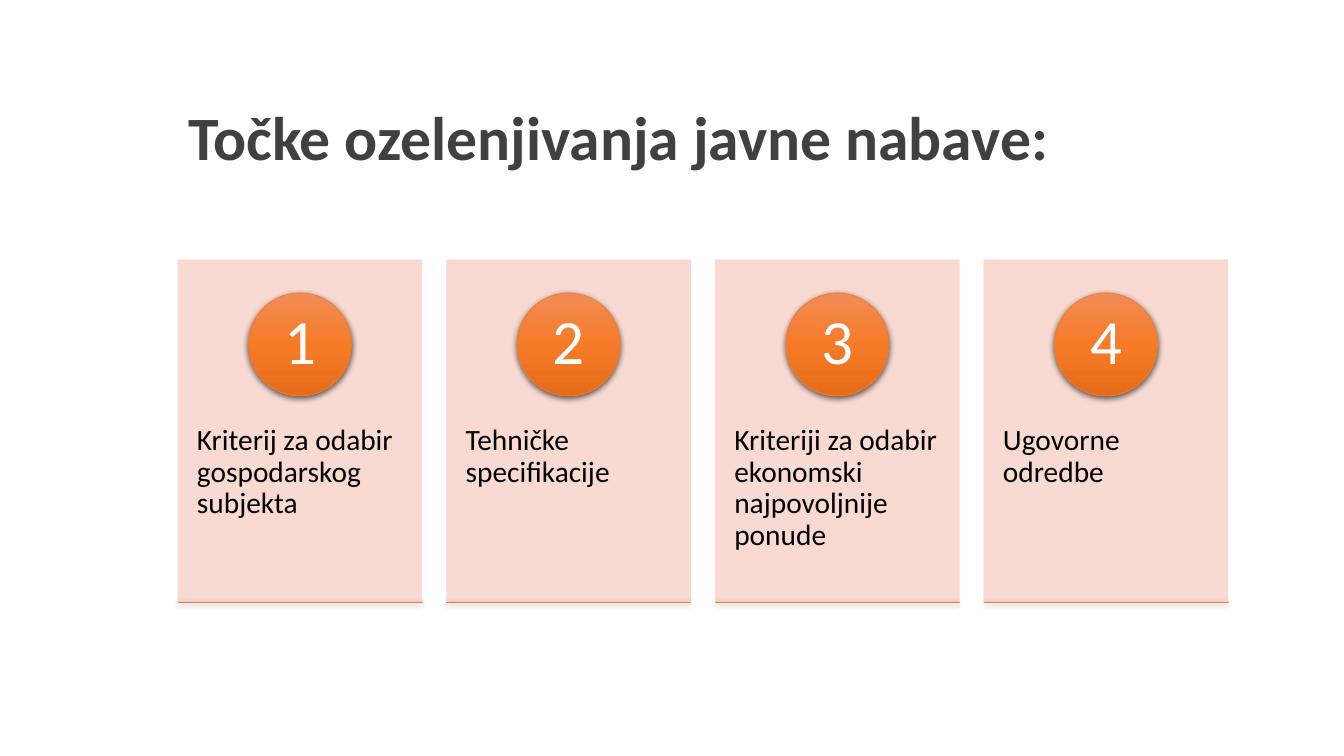
from dataclasses import dataclass

from lxml.etree import SubElement
from pptx import Presentation
from pptx.dml.color import RGBColor
from pptx.enum.shapes import MSO_SHAPE
from pptx.enum.text import MSO_ANCHOR, MSO_AUTO_SIZE, PP_ALIGN
from pptx.oxml.ns import qn
from pptx.util import Emu, Pt

PAGE_WIDTH, PAGE_HEIGHT = 1344, 756
EMU_PER_PX = 12192000 / PAGE_WIDTH

LEFT, WIDTH = 178, 1050
CARD_TOP, CARD_WIDTH, CARD_HEIGHT = 260, 244, 342
BADGE_TOP, BADGE_SIZE = 293, 103
CARD_INSETS = (19, 165, 19, 43)
BADGE_INSETS = (8, 1, 8, 1)

TITLE = "Točke ozelenjivanja javne nabave:"
POINTS = [
    "Kriterij za odabir gospodarskog subjekta",
    "Tehničke specifikacije",
    "Kriteriji za odabir ekonomski najpovoljnije ponude",
    "Ugovorne odredbe",
]


@dataclass(frozen=True)
class Theme:
    font: str = "Calibri"
    title_size: int = 44
    badge_size: int = 45
    body_size: int = 21
    title: str = "404040"
    body: str = "000000"
    badge_text: str = "FFFFFF"
    card: str = "F8D7CE"
    card_opacity: int = 90
    accent_line: str = "ED7D31"
    accent_stops: tuple = ((0, "F18C57"), (50, "F67B28"), (100, "E56C19"))
    shadow: str = "000000"
    shadow_opacity: int = 63


def px(length):
    return Emu(round(length * EMU_PER_PX))


def add_alpha(color_node, opacity):
    SubElement(color_node, qn("a:alpha"), val=str(opacity * 1000))


class SlideBuilder:
    def __init__(self, page, theme):
        self.page = page
        self.theme = theme

    def set_text(self, frame, text, size, color, align=PP_ALIGN.LEFT, bold=False):
        frame.word_wrap = True
        frame.text = text
        para = frame.paragraphs[0]
        para.alignment = align
        para.line_spacing = 0.9
        font = para.font
        font.name, font.size, font.bold = self.theme.font, Pt(size), bold
        font.color.rgb = RGBColor.from_string(color)

    def title(self, text, left, top, width, height):
        box = self.page.shapes.title
        box.left, box.top, box.width, box.height = map(px, (left, top, width, height))
        frame = box.text_frame
        frame.auto_size = MSO_AUTO_SIZE.NONE
        frame.vertical_anchor = MSO_ANCHOR.MIDDLE
        self.set_text(frame, text, self.theme.title_size, self.theme.title, bold=True)

    def shape(self, kind, left, top, width, height, line_color):
        box = self.page.shapes.add_shape(kind, *map(px, (left, top, width, height)))
        box.shadow.inherit = False
        box.line.width = Pt(0.5)
        box.line.color.rgb = RGBColor.from_string(line_color)
        return box

    def set_insets(self, frame, insets):
        (frame.margin_left, frame.margin_top,
         frame.margin_right, frame.margin_bottom) = map(px, insets)

    def card(self, text, left):
        theme = self.theme
        box = self.shape(MSO_SHAPE.RECTANGLE, left, CARD_TOP,
                         CARD_WIDTH, CARD_HEIGHT, theme.card)
        box.fill.solid()
        box.fill.fore_color.rgb = RGBColor.from_string(theme.card)
        for color_node in box._element.spPr.findall(f".//{qn('a:srgbClr')}"):
            add_alpha(color_node, theme.card_opacity)
        frame = box.text_frame
        frame.vertical_anchor = MSO_ANCHOR.TOP
        self.set_insets(frame, CARD_INSETS)
        self.set_text(frame, text, theme.body_size, theme.body)

    def accent(self, kind, left, top, width, height):
        """Add a shape with the orange gradient and a soft shadow below it."""
        theme = self.theme
        box = self.shape(kind, left, top, width, height, theme.accent_line)
        box.fill.gradient()
        box.fill.gradient_angle = 270
        properties = box._element.spPr
        stops = properties.find(f".//{qn('a:gsLst')}")
        stops.clear()
        for position, color in theme.accent_stops:
            stop = SubElement(stops, qn("a:gs"), pos=str(position * 1000))
            SubElement(stop, qn("a:srgbClr"), val=color)
        shadow = SubElement(properties.find(qn("a:effectLst")), qn("a:outerShdw"),
                            blurRad=str(int(Pt(4.5))), dist=str(int(Pt(1.5))),
                            dir="5400000", algn="ctr", rotWithShape="0")
        shadow_color = SubElement(shadow, qn("a:srgbClr"), val=theme.shadow)
        add_alpha(shadow_color, theme.shadow_opacity)
        return box

    def badge(self, number, left):
        box = self.accent(MSO_SHAPE.OVAL, left, BADGE_TOP, BADGE_SIZE, BADGE_SIZE)
        frame = box.text_frame
        frame.vertical_anchor = MSO_ANCHOR.MIDDLE
        self.set_insets(frame, BADGE_INSETS)
        self.set_text(frame, str(number), self.theme.badge_size,
                      self.theme.badge_text, PP_ALIGN.CENTER)

    def base_rule(self, left):
        self.accent(MSO_SHAPE.RECTANGLE, left, CARD_TOP + CARD_HEIGHT, CARD_WIDTH, 0)


def main():
    deck = Presentation()
    deck.slide_width, deck.slide_height = px(PAGE_WIDTH), px(PAGE_HEIGHT)
    title_only = deck.slide_layouts[5]
    builder = SlideBuilder(deck.slides.add_slide(title_only), Theme())
    builder.title(TITLE, LEFT, 86, WIDTH, 110)

    pitch = (WIDTH - CARD_WIDTH) / (len(POINTS) - 1)
    for index, point in enumerate(POINTS):
        left = LEFT + index * pitch
        builder.card(point, left)
        builder.badge(index + 1, left + (CARD_WIDTH - BADGE_SIZE) / 2)
        builder.base_rule(left)
    deck.save("out.pptx")


if __name__ == "__main__":
    main()
